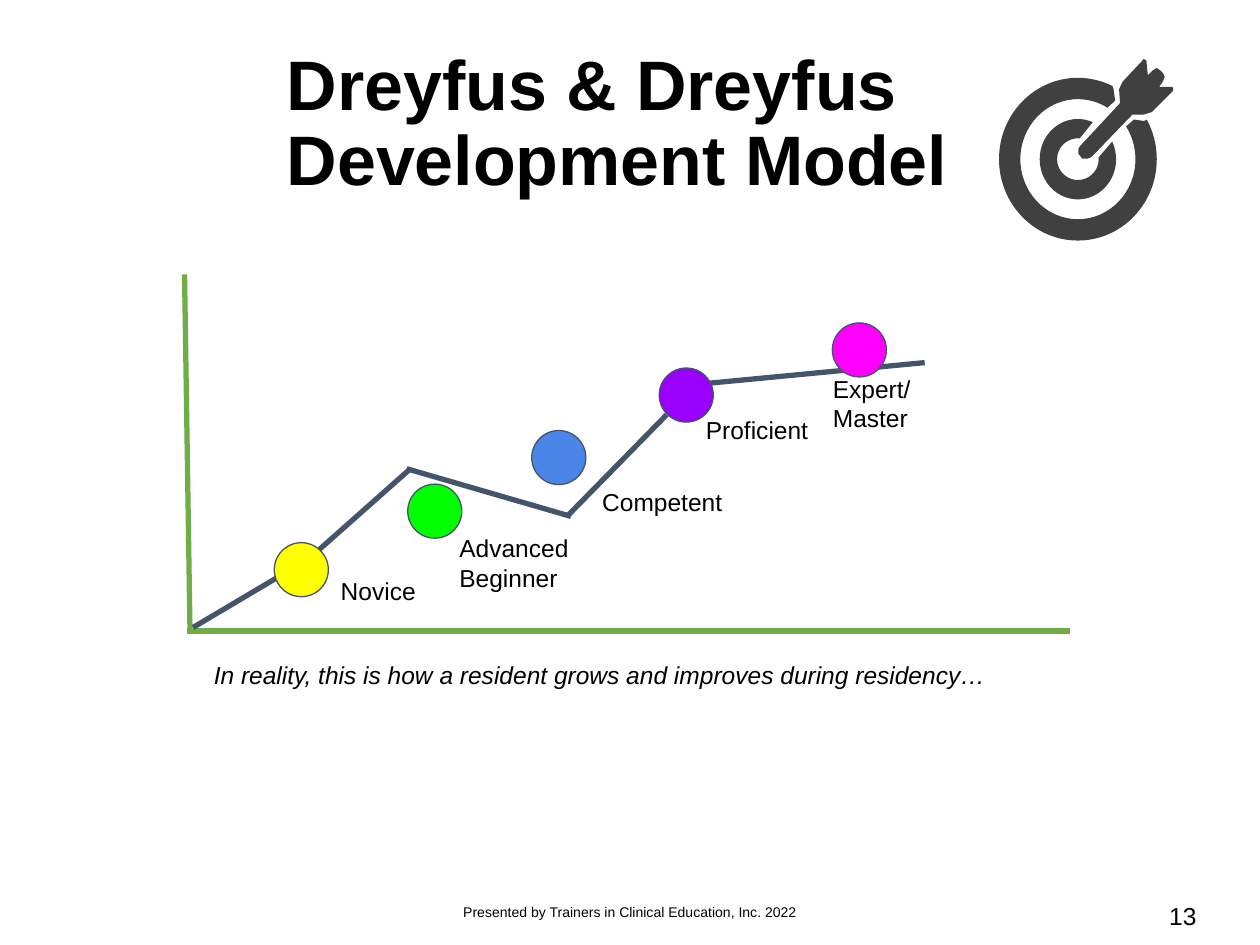
from itertools import pairwise
from math import cos, radians, sin, tan

from lxml import etree
from pptx import Presentation
from pptx.dml.color import RGBColor
from pptx.enum.shapes import MSO_CONNECTOR, MSO_SHAPE
from pptx.enum.text import MSO_ANCHOR, PP_ALIGN
from pptx.oxml.ns import qn
from pptx.util import Cm, Pt

STRAIGHT = MSO_CONNECTOR.STRAIGHT
CIRCLE = MSO_SHAPE.FLOWCHART_CONNECTOR
TOP, MIDDLE = MSO_ANCHOR.TOP, MSO_ANCHOR.MIDDLE
LEFT, CENTER = PP_ALIGN.LEFT, PP_ALIGN.CENTER

COLORS = {
    "text": "000000", "axis": "70AD47", "path": "44546A", "icon": "404040",
    "yellow": "FFFF00", "green": "00FF00", "blue": "4A86E8",
    "purple": "9900FF", "magenta": "FF00FF",
}
DIAMETER = 1.09

AXES = [(3.72, 5.53, 3.83, 12.72), (3.77, 12.72, 21.56, 12.72)]
GROWTH = [
    (3.89, 12.65, 6.2, 11.28), (6.3, 11.2, 8.25, 9.47),
    (8.2, 9.45, 11.51, 10.41), (11.43, 10.41, 13.44, 8.36),
    (13.82, 7.77, 18.64, 7.31),
]
# Colour, circle position, label lines, label position and width
STAGES = [
    ("yellow", (5.53, 10.94), ["Novice"], (6.62, 11.37, 2.79)),
    ("green", (8.22, 9.76), ["Advanced Beginner"], (9.01, 10.5, 2.79)),
    ("blue", (10.72, 8.68), ["Competent"], (11.89, 9.56, 2.97)),
    ("purple", (13.29, 7.42), ["Proficient"], (13.98, 8.11, 2.79)),
    ("magenta", (16.78, 6.51), ["Expert/", "Master"], (16.54, 7.29, 2.79)),
]

TARGET_CENTER = (21.73, 3.21)
DART = [
    (23.37, 1.75), (23.44, 1.65), (23.48, 1.55), (23.44, 1.47), (23.39, 1.42),
    (23.32, 1.37), (23.24, 1.42), (23.14, 1.52), (23.11, 1.22), (23.06, 1.19),
    (22.63, 1.65), (22.56, 1.8), (22.58, 2.08), (21.77, 2.95), (21.74, 3),
    (21.74, 3.1), (21.82, 3.2), (21.92, 3.2), (22, 3.17), (22.83, 2.31),
    (23.06, 2.31), (23.22, 2.26), (23.65, 1.83), (23.65, 1.77), (23.62, 1.75),
]


def color(name):
    return RGBColor.from_string(COLORS[name])


def add_text(page, place, lines, size=14, bold=False, italic=False,
             align=LEFT, anchor=TOP, spacing=1, inset=0.25, wrap=True):
    box = page.shapes.add_textbox(*(Cm(length) for length in place))
    frame = box.text_frame
    settings = {
        "word_wrap": wrap, "vertical_anchor": anchor,
        "margin_left": Cm(0.25), "margin_right": Cm(0.25),
        "margin_top": Cm(inset), "margin_bottom": Cm(inset),
    }
    for name, value in settings.items():
        setattr(frame, name, value)
    font = {"name": "Arial", "size": Pt(size), "bold": bold, "italic": italic}
    for index, line in enumerate(lines):
        para = frame.add_paragraph() if index else frame.paragraphs[0]
        para.alignment = align
        para.line_spacing = spacing
        span = para.add_run()
        span.text = line
        for name, value in font.items():
            setattr(span.font, name, value)
        span.font.color.rgb = color("text")


def add_line(page, ends, color_name):
    line = page.shapes.add_connector(STRAIGHT, *(Cm(length) for length in ends))
    line.line.color.rgb = color(color_name)
    line.line.width = Pt(3)
    etree.SubElement(line._element.spPr, qn("a:effectLst"))


def add_circle(page, left, top, color_name):
    circle = page.shapes.add_shape(
        CIRCLE, Cm(left), Cm(top), Cm(DIAMETER), Cm(DIAMETER))
    circle.shadow.inherit = False
    circle.fill.solid()
    circle.fill.fore_color.rgb = color(color_name)
    circle.line.color.rgb = color("path")
    circle.line.width = Pt(0.75)


def add_outline(page, segments):
    """Draw segments of one point (line) or three points (Bézier curve)."""
    corners = [(Cm(x), Cm(y)) for segment in segments for x, y in segment]
    builder = page.shapes.build_freeform(*corners[0])
    builder.add_line_segments(corners[1:], close=True)
    outline = builder.convert_to_shape()
    # Join each three points of a curve into one Bézier element
    steps = iter(list(outline._element.iter(qn("a:lnTo"))))
    for segment in segments[1:]:
        group = [next(steps) for _ in segment]
        if len(group) == 3:
            curve = etree.Element(qn("a:cubicBezTo"))
            group[0].addprevious(curve)
            for step in group:
                curve.append(step[0])
                step.getparent().remove(step)
    outline.shadow.inherit = False
    outline.fill.solid()
    outline.fill.fore_color.rgb = color("icon")
    outline.line.fill.background()


def arc(radius_x, radius_y, *angles):
    """Segments on an ellipse about the target centre, angles in degrees."""
    center_x, center_y = TARGET_CENTER

    def point(angle, pull=0):
        return (center_x + radius_x * (cos(angle) - pull * sin(angle)),
                center_y + radius_y * (sin(angle) + pull * cos(angle)))

    turns = [radians(angle) for angle in angles]
    segments = [[point(turns[0])]]
    for start, end in pairwise(turns):
        pull = 4 / 3 * tan((end - start) / 4)
        segments.append([point(start, pull), point(end, -pull), point(end)])
    return segments


def add_target(page):
    add_outline(page, arc(1.59, 1.64, -29, 0, 90, 180, 270, 296)
                + [[(22.45, 1.8)], [(22.48, 2.03)]]
                + arc(1.16, 1.21, 301, 270, 180, 90, 0, -33)
                + [[(22.86, 2.41)], [(23.06, 2.44)]])
    add_outline(page, arc(0.77, 0.81, -26, 0, 90, 180, 270, 293)
                + arc(0.42, 0.42, 275, 180, 90, 0, -5))
    add_outline(page, [[corner] for corner in DART])


def main():
    deck = Presentation()
    deck.slide_width, deck.slide_height = Cm(25.4), Cm(19.05)
    page = deck.slides.add_slide(deck.slide_layouts[6])

    # Title and icon
    add_text(page, (5.53, 0.71, 18.14, 3.63),
             ["Dreyfus & Dreyfus Development Model"],
             size=40, bold=True, anchor=MIDDLE, spacing=0.9)
    add_target(page)

    # Axes and growth path
    for ends in AXES:
        add_line(page, ends, "axis")
    for ends in GROWTH:
        add_line(page, ends, "path")

    # Stages
    for color_name, position, lines, (left, top, width) in STAGES:
        add_circle(page, *position, color_name)
        add_text(page, (left, top, width, 0.84), lines)

    # Caption, footer and page number
    add_text(page, (4.06, 13.06, 17.81, 1.47),
             ["In reality, this is how a resident grows and improves "
              "during residency…"], italic=True)
    add_text(page, (8.41, 17.88, 8.59, 1.02),
             ["Presented by Trainers in Clinical Education, Inc. 2022"],
             size=8, align=CENTER, anchor=MIDDLE, inset=0.13)
    add_text(page, (23.32, 18.03, 1.07, 0.86), ["13"], inset=0.13, wrap=False)

    deck.save("out.pptx")


if __name__ == "__main__":
    main()
